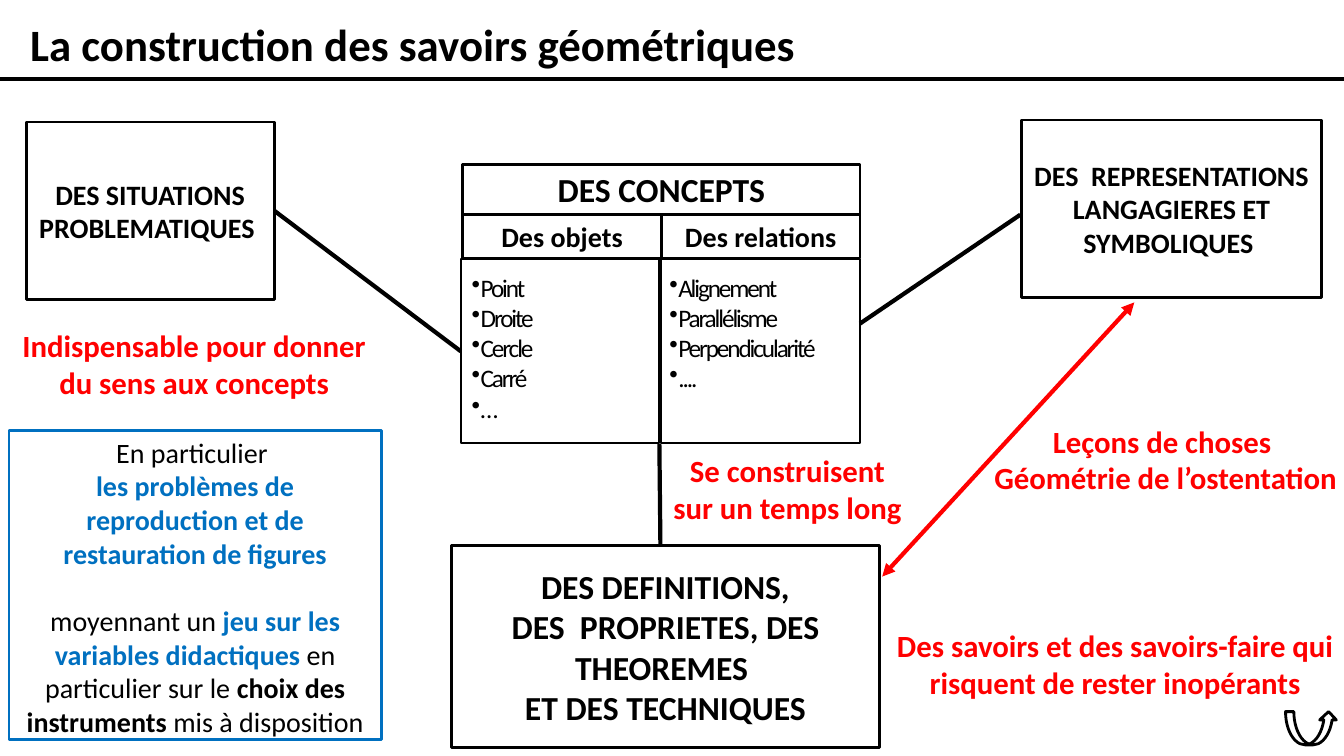
from lxml import etree
from pptx import Presentation
from pptx.dml.color import RGBColor
from pptx.enum.shapes import MSO_CONNECTOR, MSO_SHAPE
from pptx.enum.text import MSO_ANCHOR, MSO_AUTO_SIZE, PP_ALIGN
from pptx.oxml.ns import qn
from pptx.util import Inches, Pt

STRAIGHT = MSO_CONNECTOR.STRAIGHT
RECTANGLE, CURVED_ARROW = MSO_SHAPE.RECTANGLE, MSO_SHAPE.CURVED_UP_ARROW
TOP, MIDDLE = MSO_ANCHOR.TOP, MSO_ANCHOR.MIDDLE
LEFT, CENTER = PP_ALIGN.LEFT, PP_ALIGN.CENTER
NO_AUTOFIT = MSO_AUTO_SIZE.NONE
FONT = "Calibri"
BLACK, WHITE, RED, BLUE = "000000", "FFFFFF", "FF0000", "0070C0"
LEFT_SIDE, RIGHT_SIDE = 1, 3
SLIDE_WIDTH, SLIDE_HEIGHT = 13.33, 7.5


def color(hex_value):
    return RGBColor.from_string(hex_value)


def inches(box):
    return [Inches(length) for length in box]


def add_run(paragraph, text, size, hex_color=BLACK, bold=True):
    run = paragraph.add_run()
    run.text = text
    run.font.name = FONT
    run.font.size = Pt(size)
    run.font.bold = bold
    run.font.color.rgb = color(hex_color)
    return run


def write(shape, paragraphs, size, hex_color=BLACK, align=CENTER, anchor=TOP):
    """Fill a shape; each paragraph is a string or a list of (text, color, bold)."""
    frame = shape.text_frame
    frame.word_wrap = True
    frame.auto_size = NO_AUTOFIT
    frame.vertical_anchor = anchor
    frame.margin_left = frame.margin_right = Inches(0.1)
    frame.margin_top = frame.margin_bottom = Inches(0.05)
    for index, content in enumerate(paragraphs):
        paragraph = frame.add_paragraph() if index else frame.paragraphs[0]
        paragraph.alignment = align
        runs = [(content, hex_color, True)] if isinstance(content, str) else content
        for text, run_color, bold in runs:
            add_run(paragraph, text, size, run_color, bold)
    return frame


def add_outline(slide, box, line_color=BLACK, width=2, fill=None, kind=RECTANGLE):
    shape = slide.shapes.add_shape(kind, *inches(box))
    shape.shadow.inherit = False
    if fill:
        shape.fill.solid()
        shape.fill.fore_color.rgb = color(fill)
    else:
        shape.fill.background()
    shape.line.color.rgb = color(line_color)
    shape.line.width = Pt(width)
    return shape


def add_line(slide, start, end, hex_color=BLACK, arrows=False):
    line = slide.shapes.add_connector(STRAIGHT, *inches(start + end))
    line.line.color.rgb = color(hex_color)
    line.line.width = Pt(3)
    if arrows:
        outline = line.line._get_or_add_ln()
        for end_name in ("a:headEnd", "a:tailEnd"):
            etree.SubElement(outline, qn(end_name), type="triangle")
    etree.SubElement(line._element.spPr, qn("a:effectLst"))
    return line


def add_title(slide, box):
    title = slide.shapes.title
    title.left, title.top, title.width, title.height = inches(box)
    write(title, ["La construction des savoirs géométriques"], 32, align=LEFT)
    add_line(slide, (0, 0.78), (SLIDE_WIDTH, 0.78))


def add_theme(slide, box, paragraphs, size):
    shape = add_outline(slide, box, fill=WHITE)
    write(shape, paragraphs, size, anchor=MIDDLE)
    return shape


def add_remark(slide, box, paragraphs):
    write(slide.shapes.add_textbox(*inches(box)), paragraphs, 22, RED)


def add_bullets(slide, box, items):
    frame = slide.shapes.add_textbox(*inches(box)).text_frame
    frame.word_wrap = True
    for index, item in enumerate(items):
        paragraph = frame.add_paragraph() if index else frame.paragraphs[0]
        properties = paragraph._p.get_or_add_pPr()
        properties.set("marL", str(Inches(0.08)))
        properties.set("indent", str(Inches(-0.31)))
        bullet_color = etree.SubElement(properties, qn("a:buClr"))
        etree.SubElement(bullet_color, qn("a:srgbClr"), val=BLACK)
        etree.SubElement(properties, qn("a:buChar"), char="•")
        run = add_run(paragraph, item, 18, bold=False)
        run.font._element.set("spc", "-150")


def add_concepts(slide, box):
    """Draw the heading and its two columns; return the first column's list frame."""
    left, top, width, height = box
    column = width / 2
    header, subheader = 0.5, 0.43
    list_top = top + header + subheader + 0.01
    list_height = height - header - subheader - 0.01
    write(add_outline(slide, (left, top, width, header)), ["DES CONCEPTS"], 24)
    columns = [
        ("Des objets", ["Point", "Droite", "Cercle", "Carré", "…"]),
        ("Des relations", ["Alignement", "Parallélisme", "Perpendicularité", "...."]),
    ]
    frames = []
    for index, (name, items) in enumerate(columns):
        x = left + index * column
        heading = add_outline(slide, (x, top + header, column, subheader))
        write(heading, [name], 20)
        frame_left = x - 0.02 * (1 - index)
        frames.append(add_outline(
            slide, (frame_left, list_top, column, list_height), width=1.5))
        add_bullets(slide, (x - 0.01 - 0.01 * index, list_top + 0.08, 2.11, 1.6), items)
    return frames[0]


def add_details(slide, box):
    paragraphs = [
        [("En particulier ", BLACK, False)],
        [("les problèmes de reproduction et de restauration de figures", BLUE, True)],
        [("moyennant un ", BLACK, False),
         ("jeu sur les variables didactiques", BLUE, True),
         (" en particulier sur le ", BLACK, False),
         ("choix des instruments", BLACK, True),
         (" mis à disposition", BLACK, False)],
    ]
    frame = write(add_outline(slide, box, BLUE), paragraphs, 20)
    frame.paragraphs[1].space_after = Pt(24)


def main():
    presentation = Presentation()
    presentation.slide_width = Inches(SLIDE_WIDTH)
    presentation.slide_height = Inches(SLIDE_HEIGHT)
    slide = presentation.slides.add_slide(presentation.slide_layouts[5])

    add_title(slide, (0.2, 0.12, 12.91, 0.63))
    situations = add_theme(slide, (0.26, 1.21, 2.46, 1.76),
                           ["DES SITUATIONS PROBLEMATIQUES "], 20)
    add_theme(slide, (10.13, 1.19, 2.98, 1.76),
              ["DES  REPRESENTATIONS LANGAGIERES ET SYMBOLIQUES "], 20)
    add_theme(slide, (4.48, 5.41, 4.24, 2.01),
              ["DES DEFINITIONS,", "DES  PROPRIETES, DES THEOREMES ",
               "ET DES TECHNIQUES"], 24)
    objects = add_concepts(slide, (4.59, 1.63, 3.94, 2.77))

    link = add_line(slide, (2.72, 2.09), (4.57, 3.49))
    link.begin_connect(situations, RIGHT_SIDE)
    link.end_connect(objects, LEFT_SIDE)
    add_line(slide, (10.12, 2.13), (8.53, 3.21))
    add_line(slide, (6.54, 4.4), (6.55, 5.41))
    add_line(slide, (11.25, 3), (8.75, 5.72), RED, arrows=True)

    add_remark(slide, (0.08, 3.19, 3.69, 0.84),
               ["Indispensable pour donner du sens aux concepts"])
    add_remark(slide, (6.56, 4.43, 2.5, 0.84), ["Se construisent sur un temps long"])
    add_remark(slide, (9.59, 4.14, 3.94, 0.84),
               ["Leçons de choses ", "Géométrie de l’ostentation"])
    add_remark(slide, (8.78, 6.17, 4.56, 0.84),
               ["Des savoirs et des savoirs-faire qui risquent de rester inopérants"])
    add_details(slide, (0.09, 4.27, 3.69, 3.07))
    add_outline(slide, (12.75, 7.06, 0.51, 0.33), kind=CURVED_ARROW)
    presentation.save("out.pptx")


if __name__ == "__main__":
    main()
